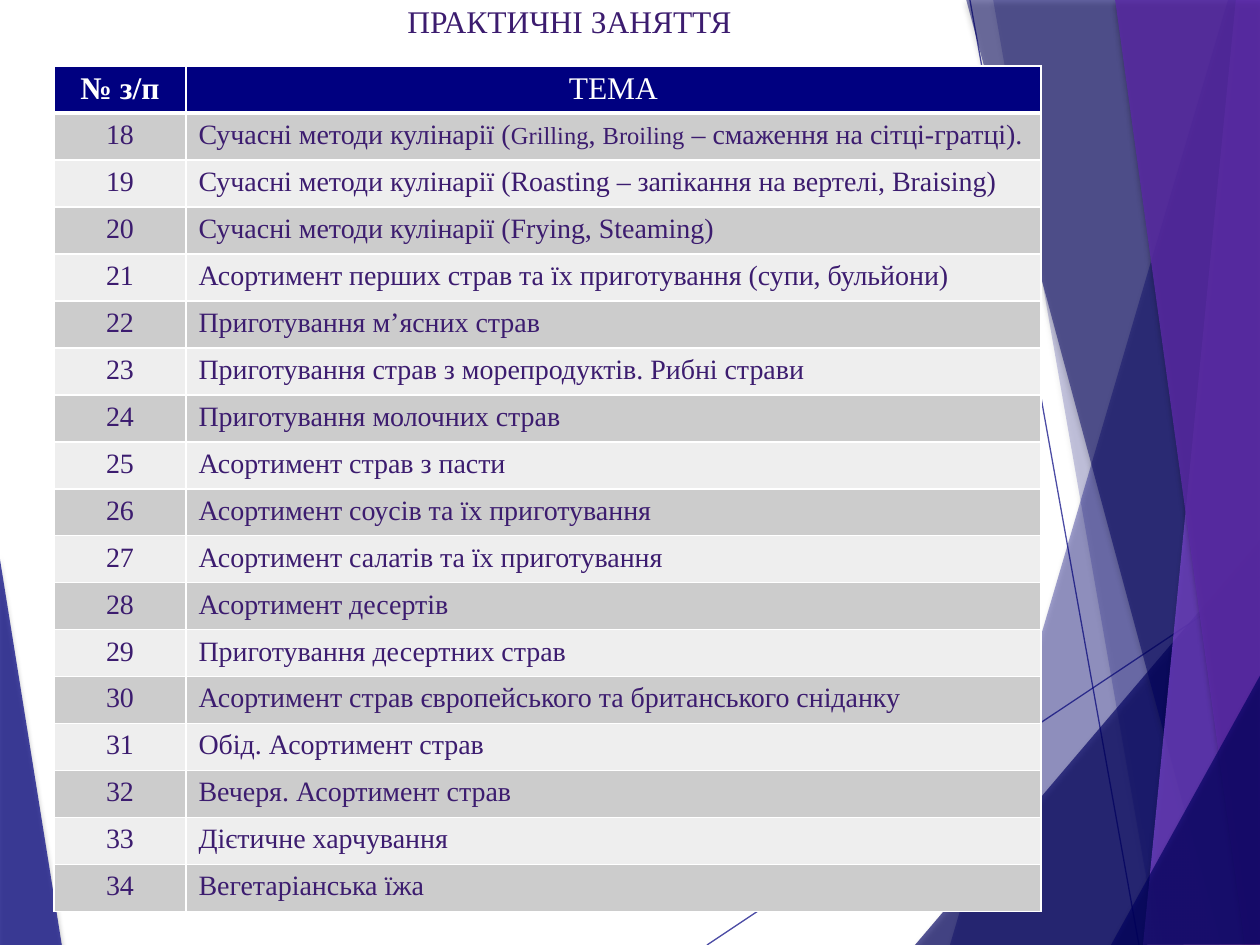
from lxml import etree
from pptx import Presentation
from pptx import util as u
from pptx.dml.color import RGBColor
from pptx.enum import shapes, text
from pptx.oxml import parse_xml
from pptx.oxml.ns import qn

# Content
TITLE = "ПРАКТИЧНІ ЗАНЯТТЯ"
HEADINGS = ("№ з/п", "ТЕМА")
FIRST_NUMBER = 18
SMALL_WORDS = ("Grilling", "Broiling")
TOPICS = [
    "Сучасні методи кулінарії (Grilling, Broiling – смаження на сітці-гратці).",
    "Сучасні методи кулінарії (Roasting – запікання на вертелі, Braising)",
    "Сучасні методи кулінарії (Frying, Steaming)",
    "Асортимент перших страв та їх приготування (супи, бульйони)",
    "Приготування м’ясних страв",
    "Приготування страв з морепродуктів. Рибні страви",
    "Приготування молочних страв",
    "Асортимент страв з пасти",
    "Асортимент соусів та їх приготування",
    "Асортимент салатів та їх приготування",
    "Асортимент десертів",
    "Приготування десертних страв",
    "Асортимент страв європейського та британського сніданку",
    "Обід. Асортимент страв",
    "Вечеря. Асортимент страв",
    "Дієтичне харчування",
    "Вегетаріанська їжа",
]

THEME = {
    "font": "Times New Roman",
    "title": 18, "heading": 18, "body": 16, "small": 14,
    "ink": "3C1C6F", "white": "FFFFFF", "navy": "000080", "deep": "000060",
    "lilac": "7B46D0", "violet": "5A2AA6", "bands": ("CCCCCC", "EEEEEE"),
    "rule": 0.96, "header_rule": 3, "ray": 0.75, "ray_opacity": 70,
}

# Geometry in px
PX = 914400 / 126
WIDTH, HEIGHT = 1260, 945
TITLE_BOX = (253, -4, 633, 50)
TABLE_LEFT, TABLE_TOP, ROW_HEIGHT = 54, 66, 47
COLUMNS = (132, 855)
HEADING_MARGIN = 5

# Background: facets are (colour, opacity %, corners), rays are (from, to)
LEFT_FACET = ("navy", 70, [(-1, 553), (62, 946), (-1, 945)])
RAYS = [((707, 945), (1261, 576)), ((970, 0), (1139, 945))]
RIGHT_FACETS = [
    ("navy", 36, [(1228, 0), (950, 945), (1262, 946), (1261, 1)]),
    ("navy", 20, [(993, -1), (1158, 945), (1261, 945), (1261, -1)]),
    ("deep", 66, [(915, 945), (1260, 540), (1261, 945)]),
    ("deep", 50, [(966, -1), (1221, 945), (1261, 944), (1261, -1)]),
    ("lilac", 70, [(1236, -1), (1143, 945), (1261, 945), (1260, -1)]),
    ("violet", 82, [(1115, -1), (1245, 945), (1262, 945), (1260, -1)]),
    ("deep", 66, [(1111, 945), (1261, 674), (1262, 944)]),
]

NS = 'xmlns:a="http://schemas.openxmlformats.org/drawingml/2006/main"'
SHADOW = (f'<a:effectLst {NS}><a:outerShdw blurRad="{u.Pt(3)}" dist="{u.Pt(2)}" dir="5400000" '
          'algn="ctr" rotWithShape="0"><a:srgbClr val="000000"><a:alpha val="35000"/>'
          '</a:srgbClr></a:outerShdw></a:effectLst>')


def emu(px):
    return u.Emu(round(px * PX))


def rgb(name):
    return RGBColor.from_string(THEME.get(name, name))


def set_opacity(fill_parent, percent):
    color = next(fill_parent.iter(qn("a:srgbClr")))
    etree.SubElement(color, qn("a:alpha")).set("val", str(percent * 1000))


def style_font(font, size, color, bold=False):
    font.name, font.size, font.bold = THEME["font"], u.Pt(THEME[size]), bold
    font.color.rgb = rgb(color)


def add_facet(slide, color, opacity, corners):
    builder = slide.shapes.build_freeform(*corners[0], scale=PX)
    builder.add_line_segments(corners[1:], close=True)
    facet = builder.convert_to_shape()
    facet.fill.solid()
    facet.fill.fore_color.rgb = rgb(color)
    set_opacity(facet.fill._xPr.find(qn("a:solidFill")), opacity)
    facet.line.fill.background()
    facet._element.spPr.append(parse_xml(SHADOW))


def add_ray(slide, start, end):
    ray = slide.shapes.add_connector(
        shapes.MSO_CONNECTOR.STRAIGHT, *map(emu, start + end))
    ray.line.width = u.Pt(THEME["ray"])
    ray.line.color.rgb = rgb("navy")
    properties = ray._element.spPr
    set_opacity(properties, THEME["ray_opacity"])
    etree.SubElement(properties, qn("a:effectLst"))


def style_cell(cell, color, top, bottom):
    cell.fill.solid()
    cell.fill.fore_color.rgb = rgb(color)
    widths = {"L": THEME["rule"], "R": THEME["rule"], "T": top, "B": bottom}
    for position, (side, width) in enumerate(widths.items()):
        border = parse_xml(
            f'<a:ln{side} {NS} w="{u.Pt(width)}"><a:solidFill><a:srgbClr val="{THEME["white"]}"/>'
            f'</a:solidFill></a:ln{side}>')
        cell._tc.get_or_add_tcPr().insert(position, border)


def write_topic(paragraph, topic):
    """Write the topic, setting the small words in their own runs."""
    pieces = [topic]
    for word in SMALL_WORDS:
        head, found, tail = pieces.pop().partition(word)
        pieces += [head, found, tail] if found else [head]
    for piece in pieces:
        run = paragraph.add_run()
        run.text = piece
        if piece in SMALL_WORDS:
            run.font.size = u.Pt(THEME["small"])


def add_title(slide):
    title = slide.shapes.title
    title.left, title.top, title.width, title.height = map(emu, TITLE_BOX)
    frame = title.text_frame
    frame.text = TITLE
    frame.word_wrap = True
    frame.auto_size = text.MSO_AUTO_SIZE.NONE
    frame.vertical_anchor = text.MSO_ANCHOR.TOP
    paragraph = frame.paragraphs[0]
    paragraph.alignment = text.PP_ALIGN.CENTER
    style_font(paragraph.font, "title", "ink")


def add_topics(slide):
    count = len(TOPICS) + 1
    box = (TABLE_LEFT, TABLE_TOP, sum(COLUMNS), ROW_HEIGHT * count)
    table = slide.shapes.add_table(count, len(COLUMNS), *map(emu, box)).table
    for column, width in zip(table.columns, COLUMNS):
        column.width = emu(width)
    for row in table.rows:
        row.height = emu(ROW_HEIGHT)
    rule, header_rule = THEME["rule"], THEME["header_rule"]

    # Heading row
    for index, heading in enumerate(HEADINGS):
        cell = table.cell(0, index)
        cell.text = heading
        cell.margin_top = cell.margin_bottom = emu(HEADING_MARGIN)
        paragraph = cell.text_frame.paragraphs[0]
        paragraph.alignment = text.PP_ALIGN.CENTER
        style_font(paragraph.font, "heading", "white", bold=index == 0)
        style_cell(cell, "navy", rule, header_rule)

    # Numbered topics
    for row, topic in enumerate(TOPICS, 1):
        number_cell, topic_cell = table.cell(row, 0), table.cell(row, 1)
        number_cell.text = str(FIRST_NUMBER + row - 1)
        number_cell.text_frame.paragraphs[0].alignment = text.PP_ALIGN.CENTER
        write_topic(topic_cell.text_frame.paragraphs[0], topic)
        for cell in (number_cell, topic_cell):
            style_font(cell.text_frame.paragraphs[0].font, "body", "ink")
            style_cell(cell, THEME["bands"][(row - 1) % 2],
                       header_rule if row == 1 else rule, rule)


def main():
    deck = Presentation()
    deck.slide_width, deck.slide_height = emu(WIDTH), emu(HEIGHT)
    slide = deck.slides.add_slide(deck.slide_layouts.get_by_name("Title Only"))
    add_facet(slide, *LEFT_FACET)
    for ray in RAYS:
        add_ray(slide, *ray)
    for facet in RIGHT_FACETS:
        add_facet(slide, *facet)
    add_topics(slide)
    add_title(slide)
    deck.save("out.pptx")


if __name__ == "__main__":
    main()
